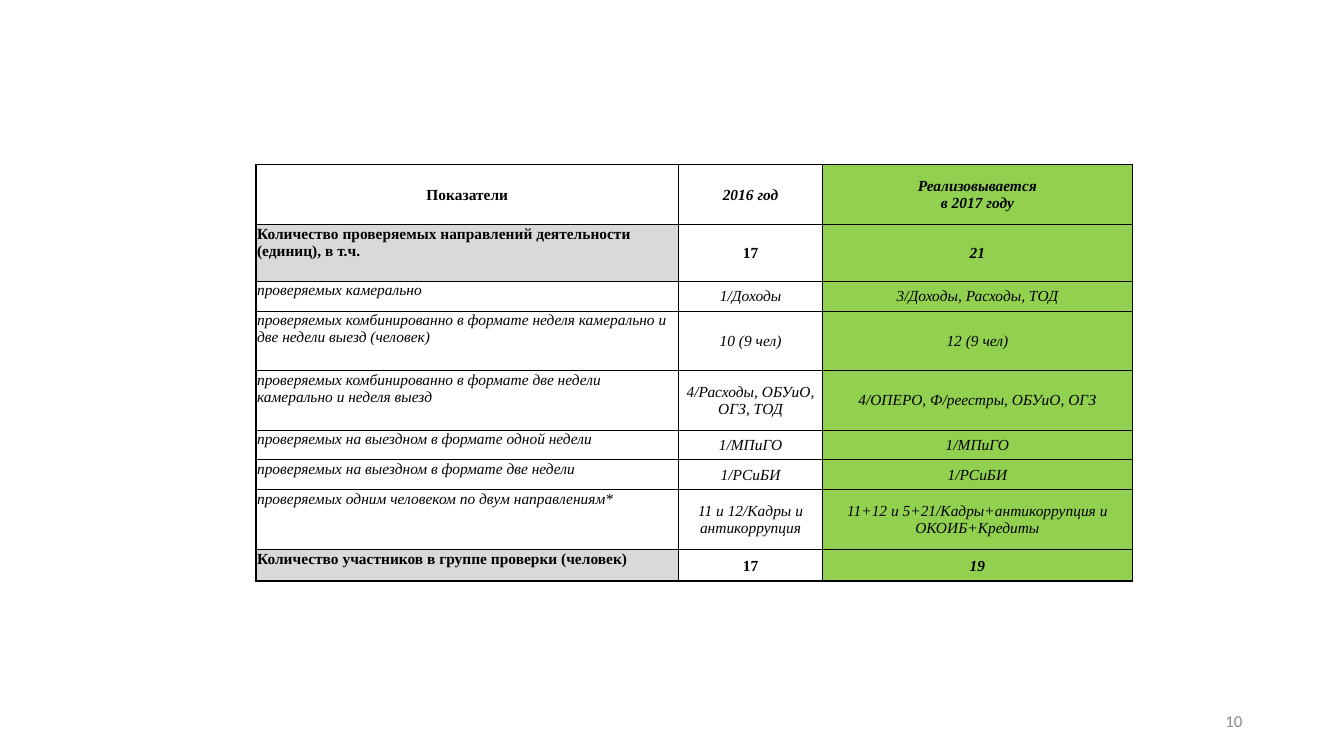
import pptx
import pptx.util
import pptx.dml.color
import pptx.enum.text
import pptx.oxml
import pptx.oxml.ns
import lxml.etree

ANCHOR = pptx.enum.text.MSO_ANCHOR
ALIGN = pptx.enum.text.PP_ALIGN
NO_GRID_STYLE = "{2D5ABB26-0587-4C30-8999-92F81FD0307C}"

# Content: indicator, 2016, 2017
INDICATORS = [
    ("Показатели", "2016 год", "Реализовывается\nв 2017 году"),
    ("Количество проверяемых направлений деятельности (единиц), в т.ч.", "17", "21"),
    ("проверяемых камерально", "1/Доходы", "3/Доходы, Расходы, ТОД"),
    ("проверяемых комбинированно в формате неделя камерально и две недели выезд (человек)",
     "10 (9 чел)", "12 (9 чел)"),
    ("проверяемых комбинированно в формате две недели камерально и неделя выезд",
     "4/Расходы, ОБУиО, ОГЗ, ТОД", "4/ОПЕРО, Ф/реестры, ОБУиО, ОГЗ"),
    ("проверяемых на выездном в формате одной недели", "1/МПиГО", "1/МПиГО"),
    ("проверяемых на выездном в формате две недели", "1/РСиБИ", "1/РСиБИ"),
    ("проверяемых одним человеком по двум направлениям*",
     "11 и 12/Кадры и антикоррупция",
     "11+12 и 5+21/Кадры+антикоррупция и ОКОИБ+Кредиты"),
    ("Количество участников в группе проверки (человек)", "17", "19"),
]
HEADER, TOTALS = 0, (1, 8)

# Grid lengths; the first and last row and column are empty margins
COLUMN_SPANS = [17, 419, 143, 307, 12]
ROW_SPANS = [31, 60, 56, 29.5, 59, 59, 29.5, 29.5, 60, 31, 29]
HEAVY_LINES = (0, 1, 8, 9)  # rows with a heavy line below


def colour(hex_code):
    return pptx.dml.color.RGBColor.from_string(hex_code)


class ReportSlide:
    """Style and current slide, on a grid of 1333 columns by 750 rows."""

    COLUMNS, ROWS = 1333, 750
    TEXT, LINE, PLAN, TOTAL, NUMBER = "000000", "000000", "92D050", "D9D9D9", "8C8C8C"
    TABLE_FONT, NUMBER_FONT = "Times New Roman", "Calibri"
    TABLE_SIZE, NUMBER_SIZE = 11, 12

    def __init__(self, deck):
        self.column = deck.slide_width / self.COLUMNS
        self.row = deck.slide_height / self.ROWS
        self.slide = deck.slides.add_slide(deck.slide_layouts[6])

    def x(self, columns):
        return round(columns * self.column)

    def y(self, rows):
        return round(rows * self.row)

    def box(self, left, top, width, height):
        return self.x(left), self.y(top), self.x(width), self.y(height)

    def wording(self, paragraph, text, font, size, hex_code, bold=False, italic=False):
        paragraph.text = text
        for run in paragraph.runs:
            run.font.name, run.font.size = font, pptx.util.Pt(size)
            run.font.bold, run.font.italic = bold, italic
            run.font.color.rgb = colour(hex_code)

    def page_number(self, text, *place):
        number = self.slide.shapes.add_textbox(*self.box(*place)).text_frame
        number.word_wrap = True
        number.vertical_anchor = ANCHOR.MIDDLE
        number.paragraphs[0].alignment = ALIGN.RIGHT
        self.wording(number.paragraphs[0], text, self.NUMBER_FONT, self.NUMBER_SIZE, self.NUMBER)

    def table(self, left, top, column_spans, row_spans):
        place = self.box(left, top, sum(column_spans), sum(row_spans))
        grid = self.slide.shapes.add_table(len(row_spans), len(column_spans), *place).table
        grid.first_row = grid.horz_banding = False
        grid._tbl.tblPr.find(pptx.oxml.ns.qn("a:tableStyleId")).text = NO_GRID_STYLE
        for column, span in zip(grid.columns, column_spans):
            column.width = self.x(span)
        for row, span in zip(grid.rows, row_spans):
            row.height = self.y(span)
        return grid

    def cell(self, cell, text="", fill=None, centred=False, bold=False, italic=False):
        cell.margin_left = cell.margin_top = cell.margin_right = self.x(1)
        cell.margin_bottom = 0
        cell.vertical_anchor = ANCHOR.MIDDLE if centred else ANCHOR.TOP
        paragraph = cell.text_frame.paragraphs[0]
        if text:
            paragraph.alignment = ALIGN.CENTER if centred else ALIGN.LEFT
            self.wording(paragraph, text, self.TABLE_FONT, self.TABLE_SIZE, self.TEXT, bold, italic)
        else:
            # Empty cells keep the table's text height
            end = lxml.etree.SubElement(paragraph._p, pptx.oxml.ns.qn("a:endParaRPr"))
            end.set("sz", str(self.TABLE_SIZE * 100))
        if fill:
            cell.fill.solid()
            cell.fill.fore_color.rgb = colour(fill)
        else:
            cell.fill.background()

    def borders(self, cell, left, right, top, bottom):
        properties = cell._tc.get_or_add_tcPr()
        for position, (side, weight) in enumerate(zip("LRTB", (left, right, top, bottom))):
            paint = f'<a:solidFill><a:srgbClr val="{self.LINE}"/></a:solidFill>'
            edge = pptx.oxml.parse_xml(
                f'<a:ln{side} {pptx.oxml.ns.nsdecls("a")} w="{pptx.util.Pt(weight)}">'
                f'{paint if weight else "<a:noFill/>"}</a:ln{side}>')
            properties.insert(position, edge)


def edge_weights(row, column):
    """Widths of the left, right, top and bottom lines of a cell."""
    last_row, last_column = len(ROW_SPANS) - 1, len(COLUMN_SPANS) - 1

    def upright(after):
        if not (0 < row < last_row and 0 <= after < last_column):
            return 0
        return 1 if after == 0 else 0.5

    def level(below):
        if not (0 < column < last_column and 0 <= below < last_row):
            return 0
        return 1 if below in HEAVY_LINES else 0.5

    return upright(column - 1), upright(column), level(row - 1), level(row)


def main():
    deck = pptx.Presentation()
    deck.slide_width, deck.slide_height = pptx.util.Inches(13.33), pptx.util.Inches(7.5)
    report = ReportSlide(deck)

    # Page number
    report.page_number("10", 942, 695, 300, 40)

    # Indicator table
    indicators = report.table(237, 132, COLUMN_SPANS, ROW_SPANS)
    for row in range(len(ROW_SPANS)):
        for column in range(len(COLUMN_SPANS)):
            cell = indicators.cell(row, column)
            entry, field = row - 1, column - 1
            if entry in range(len(INDICATORS)) and field in range(3):
                header, total = entry == HEADER, entry in TOTALS
                label, plan = field == 0, field == 2
                fill = report.PLAN if plan else report.TOTAL if label and total else None
                report.cell(cell, INDICATORS[entry][field], fill,
                            centred=header or not label,
                            bold=header or total,
                            italic=plan or not total and not (header and label))
            else:
                report.cell(cell)
            report.borders(cell, *edge_weights(row, column))

    deck.save("out.pptx")


if __name__ == "__main__":
    main()
